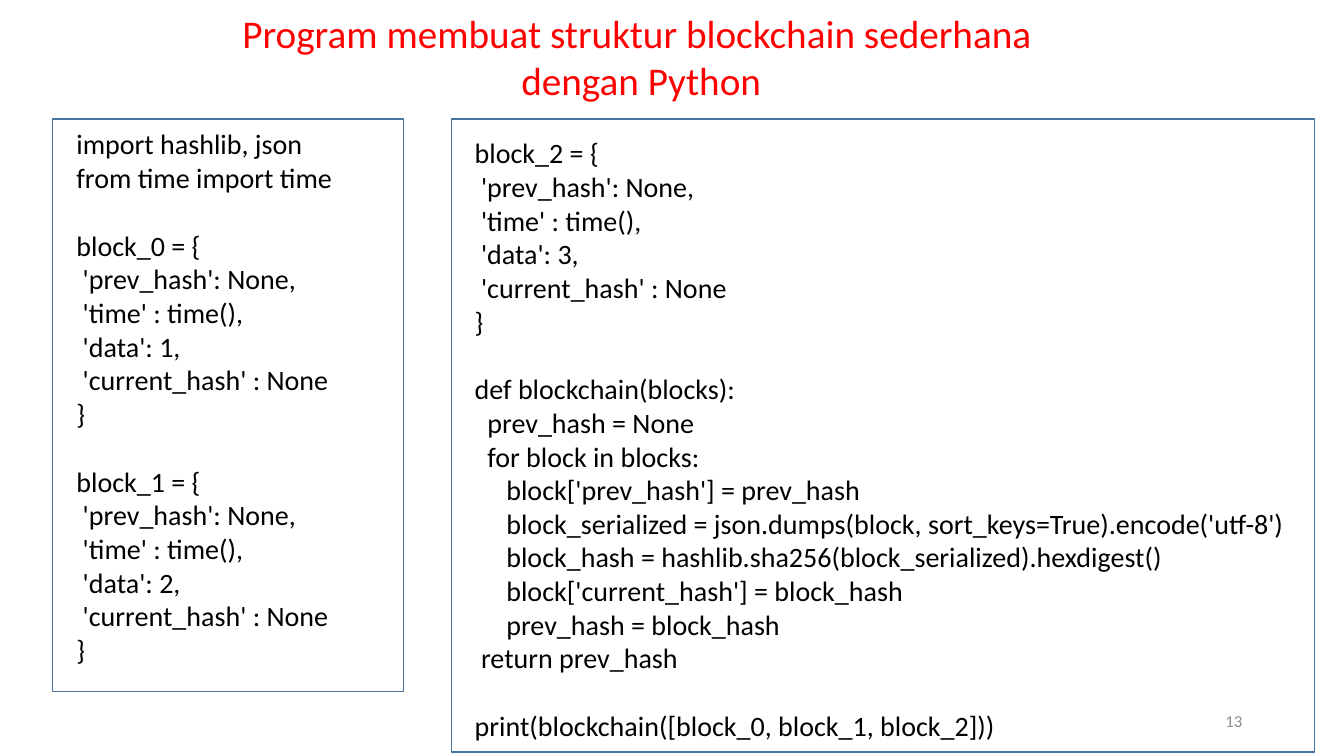
import pptx
import pptx.dml.color
import pptx.enum.shapes
import pptx.enum.text
import pptx.util

Inches, Pt = pptx.util.Inches, pptx.util.Pt
RGBColor = pptx.dml.color.RGBColor
PP_ALIGN = pptx.enum.text.PP_ALIGN
MSO_ANCHOR = pptx.enum.text.MSO_ANCHOR

BLACK = RGBColor(0x00, 0x00, 0x00)
RED = RGBColor(0xFF, 0x00, 0x00)
GRAY = RGBColor(0x8C, 0x8C, 0x8C)
BLUE = RGBColor(0x43, 0x73, 0x9E)
FONT = "Calibri"
CODE_SIZE = 20
SPACE_WIDTH = 0.226 * CODE_SIZE  # points per space of code indent
CODE_LINE = 1.22 * CODE_SIZE  # points per line of code

BLOCK = """block_{0} = {{
 'prev_hash': None,
 'time' : time(),
 'data': {1},
 'current_hash' : None
}}"""
IMPORTS = """import hashlib, json
from time import time"""
FUNCTION = """def blockchain(blocks):
  prev_hash = None
  for block in blocks:
     block['prev_hash'] = prev_hash
     block_serialized = json.dumps(block, sort_keys=True).encode('utf-8')
     block_hash = hashlib.sha256(block_serialized).hexdigest()
     block['current_hash'] = block_hash
     prev_hash = block_hash
 return prev_hash"""
CALL = "print(blockchain([block_0, block_1, block_2]))"


def place(sp, left, top, width, height):
    sp.left, sp.top = Inches(left), Inches(top)
    sp.width, sp.height = Inches(width), Inches(height)


def add_run(p, text, size, color):
    r = p.add_run()
    r.text = text
    r.font.name = FONT
    r.font.size = Pt(size)
    r.font.color.rgb = color


def add_title(s, lines):
    sp = s.shapes.title
    place(sp, 2.26, 0.04, 8.2, 1.04)
    tf = sp.text_frame
    tf.auto_size = pptx.enum.text.MSO_AUTO_SIZE.NONE
    tf.vertical_anchor = MSO_ANCHOR.TOP
    for i, line in enumerate(lines):
        p = tf.add_paragraph() if i else tf.paragraphs[0]
        p.alignment = PP_ALIGN.CENTER
        p.space_before = Pt(0)
        add_run(p, line, 28, RED)


def add_code(s, box, sections):
    """Each section is set apart by one line of paragraph spacing."""
    tf = s.shapes.add_textbox(*map(Inches, box)).text_frame
    tf.word_wrap = True
    p = None
    for section in sections:
        for i, line in enumerate(section.splitlines()):
            first = p is None
            p = tf.paragraphs[0] if first else tf.add_paragraph()
            if i == 0 and not first:
                p.space_before = Pt(CODE_LINE)
            code = line.lstrip()
            indent = Pt((len(line) - len(code)) * SPACE_WIDTH)
            if indent:
                pPr = p._p.get_or_add_pPr()
                pPr.set("marL", str(indent))
                pPr.set("indent", "0")
            add_run(p, code, CODE_SIZE, BLACK)


def add_frame(s, box):
    sp = s.shapes.add_shape(
        pptx.enum.shapes.MSO_SHAPE.RECTANGLE, *map(Inches, box))
    sp.shadow.inherit = False
    sp.fill.background()
    sp.line.color.rgb = BLUE
    sp.line.width = Pt(1)


def add_page_number(s, number):
    tf = s.shapes.add_textbox(*map(Inches, (9.42, 6.95, 3, 0.4))).text_frame
    tf.word_wrap = True
    tf.vertical_anchor = MSO_ANCHOR.MIDDLE
    p = tf.paragraphs[0]
    p.alignment = PP_ALIGN.RIGHT
    add_run(p, number, 12, GRAY)


def main():
    prs = pptx.Presentation()
    prs.slide_width, prs.slide_height = Inches(13.33), Inches(7.5)
    s = prs.slides.add_slide(prs.slide_layouts.get_by_name("Title Only"))

    # Code in two columns
    add_code(s, (0.66, 1.21, 5.07, 5.82),
             [IMPORTS, BLOCK.format(0, 1), BLOCK.format(1, 2)])
    add_code(s, (4.61, 1.3, 8.29, 6.16),
             [BLOCK.format(2, 3), FUNCTION, CALL])

    # Frames around the columns
    add_frame(s, (0.52, 1.18, 3.48, 5.68))
    add_frame(s, (4.48, 1.18, 8.56, 6.28))

    # Title and page number
    add_title(s, ["Program membuat struktur blockchain sederhana ",
                  "dengan Python"])
    add_page_number(s, "13")

    prs.save("out.pptx")


if __name__ == "__main__":
    main()
